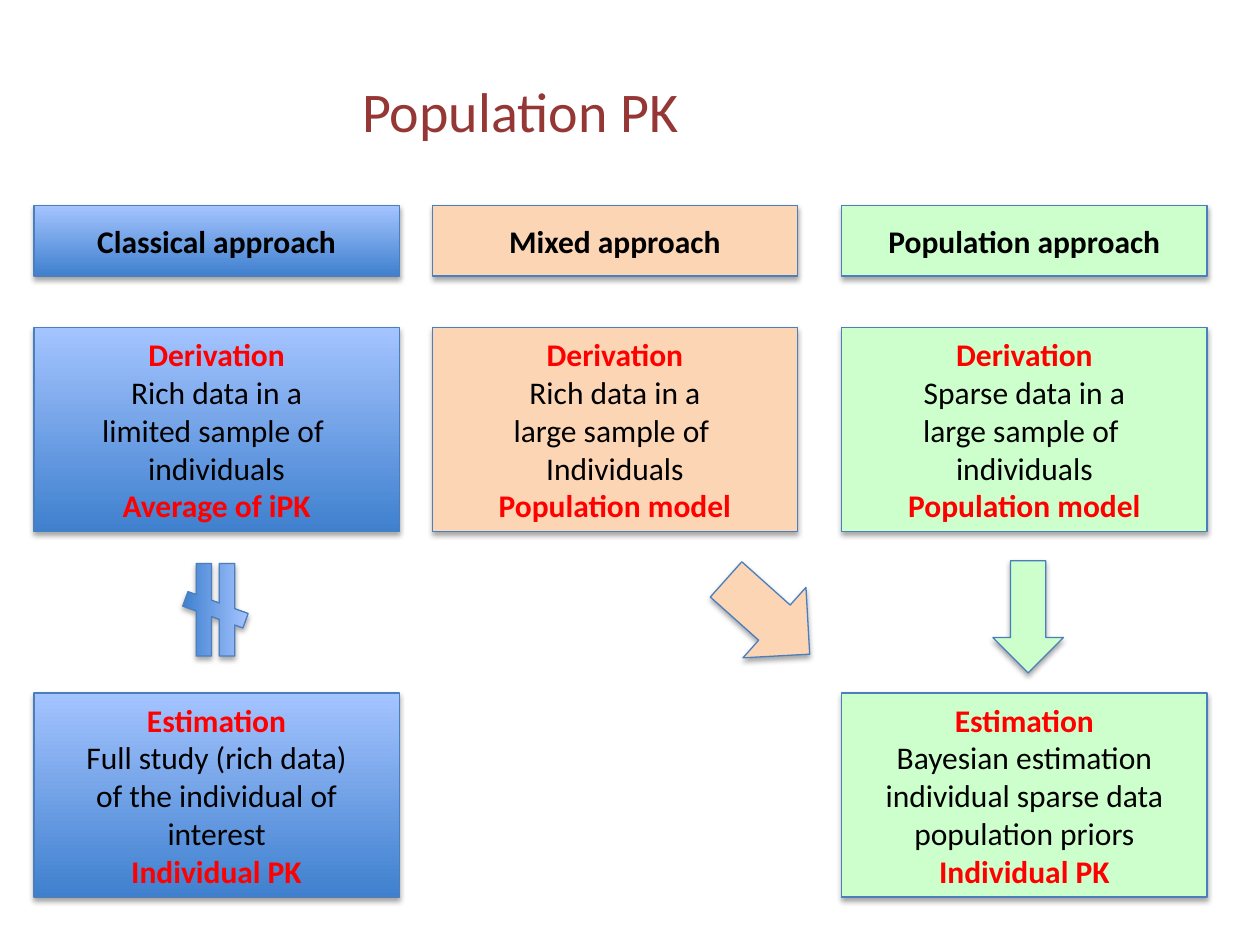
from lxml.etree import SubElement as Sub
from pptx import Presentation
from pptx.dml.color import RGBColor
from pptx.enum.shapes import MSO_SHAPE as Kind
from pptx.enum.text import MSO_ANCHOR as Anchor, PP_ALIGN as Align
from pptx.oxml.ns import qn
from pptx.util import Pt

BLACK = RGBColor(0x00, 0x00, 0x00)
RED = RGBColor(0xFF, 0x00, 0x00)
MAROON = RGBColor(0x95, 0x37, 0x35)
EDGE = RGBColor(0x4B, 0x7E, 0xBC)
DEEP = RGBColor(0x3F, 0x80, 0xCE)
PALE = RGBColor(0xA4, 0xC4, 0xFF)
PEACH = RGBColor(0xFC, 0xD5, 0xB5)
GREEN = RGBColor(0xCC, 0xFF, 0xCC)
FONT = "Calibri"

WIDTH = 208.8
HEAD = (117.4, 40.3)
DERIVE = (187.2, 116.6)
ASSESS = (396, 116.6)

COLUMNS = [
    (19.4, (DEEP, PALE), "Classical approach", [
        (DERIVE, ["Derivation", "Rich data in a", "limited sample of ",
                  "individuals", "Average of iPK"]),
        (ASSESS, ["Estimation", "Full study (rich data)",
                  "of the individual of interest", "Individual PK"]),
    ], (Kind.MATH_NOT_EQUAL, 87.1, 329.8, 72, 37.4, 90)),
    (481, (GREEN,), "Population approach", [
        (DERIVE, ["Derivation", "Sparse data in a", "large sample of ",
                  "individuals", "Population model"]),
        (ASSESS, ["Estimation", "Bayesian estimation",
                  "individual sparse data population priors", "Individual PK"]),
    ], (Kind.DOWN_ARROW, 567.4, 320.4, 40.3, 64.1, 0)),
    (247, (PEACH,), "Mixed approach", [
        (DERIVE, ["Derivation", "Rich data in a", "large sample of ",
                  "Individuals", "Population model"]),
    ], (Kind.DOWN_ARROW, 411.8, 320.4, 54, 64.1, 311.8)),
]


def cast_shade(shape):
    shape.shadow.inherit = False
    effects = shape._element.spPr.find(qn("a:effectLst"))
    outer = Sub(effects, qn("a:outerShdw"), blurRad="40000", dist="23000",
                dir="5400000", rotWithShape="0")
    color = Sub(outer, qn("a:srgbClr"), val="000000")
    Sub(color, qn("a:alpha"), val="35000")


def add_form(group, kind, left, top, width, height, paint):
    shape = group.shapes.add_shape(kind, Pt(left), Pt(top), Pt(width), Pt(height))
    if len(paint) > 1:
        shape.fill.gradient()
        shape.fill.gradient_angle = 90
        for stop, color in zip(shape.fill.gradient_stops, paint):
            stop.color.rgb = color
    else:
        shape.fill.solid()
        shape.fill.fore_color.rgb = paint[0]
    shape.line.color.rgb = EDGE
    shape.line.width = Pt(0.75)
    cast_shade(shape)
    return shape


def style(para, size, color, bold=False):
    para.alignment = Align.CENTER
    font = para.font
    font.name, font.size, font.bold = FONT, Pt(size), bold
    font.color.rgb = color


def add_box(group, left, band, paint, lines):
    top, height = band
    frame = add_form(group, Kind.RECTANGLE, left, top, WIDTH, height, paint).text_frame
    frame.word_wrap = True
    frame.vertical_anchor = Anchor.MIDDLE
    frame.text = "\n".join(lines)
    last = len(lines) - 1
    for i, para in enumerate(frame.paragraphs):
        strong = i in (0, last)
        style(para, 18, RED if strong and last else BLACK, strong)


def add_column(slide, left, paint, head, boxes, mark):
    group = slide.shapes.add_group_shape()
    add_box(group, left, HEAD, paint, [head])
    for band, lines in boxes:
        add_box(group, left, band, paint, lines)
    *place, turn = mark
    add_form(group, *place, paint).rotation = turn


def set_title(slide, text):
    title = slide.shapes.title
    title.left, title.top = Pt(78.5), Pt(24.5)
    title.width, title.height = Pt(437.8), Pt(76.3)
    frame = title.text_frame
    frame.text = text
    frame.vertical_anchor = Anchor.MIDDLE
    style(frame.paragraphs[0], 32, MAROON)


def main():
    deck = Presentation()
    deck.slide_width, deck.slide_height = Pt(720), Pt(540)
    slide = deck.slides.add_slide(deck.slide_layouts[5])
    set_title(slide, "Population PK")
    for column in COLUMNS:
        add_column(slide, *column)
    deck.save("out.pptx")


if __name__ == "__main__":
    main()
